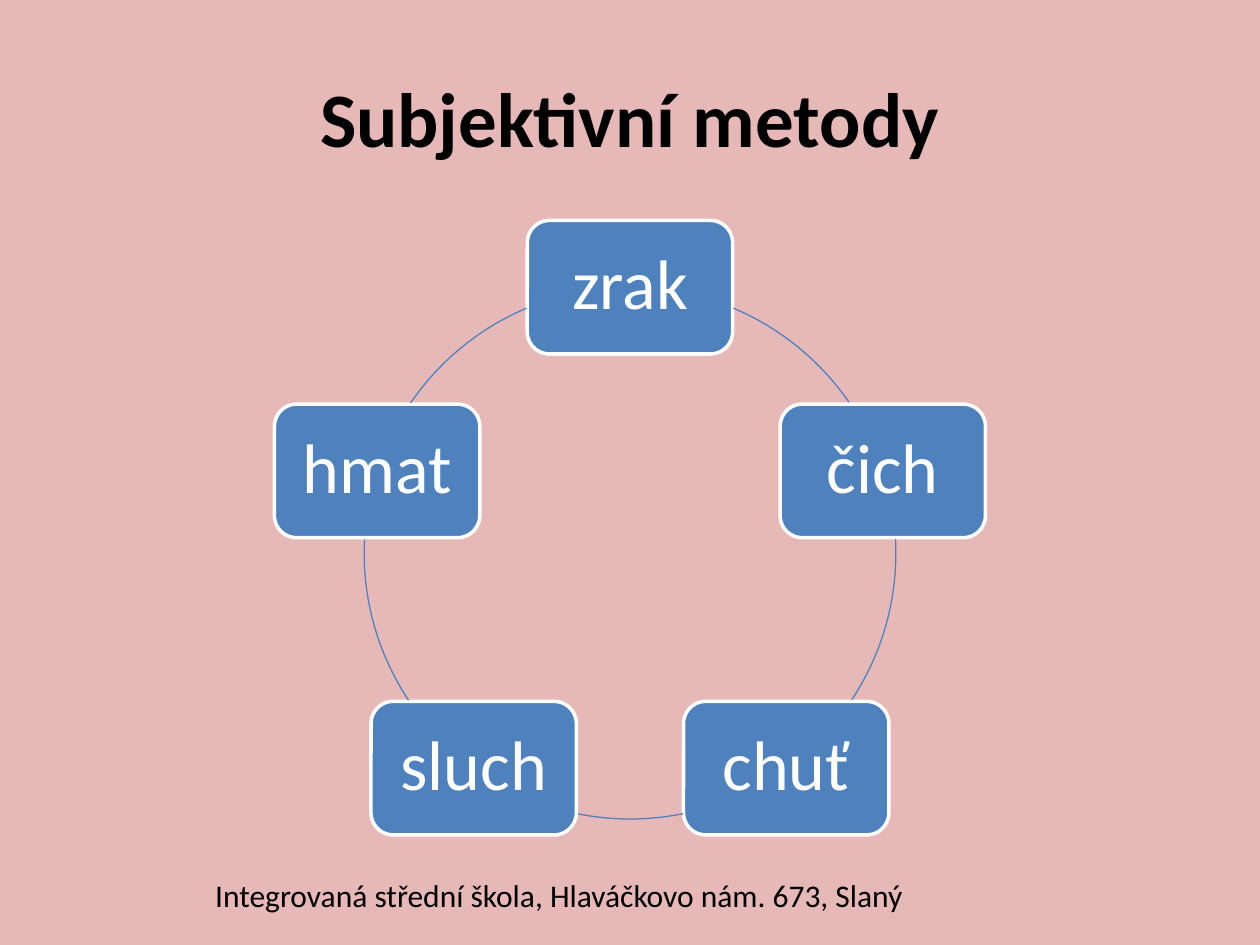
from math import cos, radians, sin

from pptx import Presentation
from pptx.dml.color import RGBColor
from pptx.enum.shapes import MSO_SHAPE as Shape
from pptx.enum.text import MSO_ANCHOR as Anchor, PP_ALIGN as Align
from pptx.util import Inches, Pt

PINK = RGBColor(0xE6, 0xB9, 0xB8)
BLUE = RGBColor(0x4F, 0x81, 0xBD)
WHITE = RGBColor(0xFF, 0xFF, 0xFF)
BLACK = RGBColor(0, 0, 0)

CENTER_X, CENTER_Y, RADIUS = 5, 4.39, 2.11
BOX_WIDTH, BOX_HEIGHT = 1.63, 1.06
SENSES = ["zrak", "čich", "chuť", "sluch", "hmat"]
ARCS = [(-67.1, -34.4), (-3, 33.6), (78.5, 101.5), (146.4, 183), (-145.6, -112.9)]


def write_text(shape, text, size, color, align, bold=False):
    """Fill a shape with one formatted paragraph."""
    frame = shape.text_frame
    frame.word_wrap = True
    frame.text = text
    paragraph = frame.paragraphs[0]
    paragraph.alignment = align
    font = paragraph.font
    font.name, font.size, font.bold = "Calibri", Pt(size), bold
    font.color.rgb = color
    return frame


def add_title(slide, text):
    """Place and format the title placeholder."""
    title = slide.shapes.title
    title.left, title.top = Inches(0.5), Inches(0.3)
    title.width, title.height = Inches(9), Inches(1.25)
    frame = write_text(title, text, 44, BLACK, Align.CENTER, bold=True)
    frame.vertical_anchor = Anchor.MIDDLE


def add_arc(slide, start, end):
    """Draw the part of the cycle's circle between two clockwise angles."""
    arc = slide.shapes.add_shape(
        Shape.ARC, Inches(CENTER_X - RADIUS), Inches(CENTER_Y - RADIUS),
        Inches(2 * RADIUS), Inches(2 * RADIUS))
    for index, angle in enumerate((start, end)):
        arc.adjustments[index] = angle % 360 * 0.6
    arc.shadow.inherit = False
    arc.fill.background()
    arc.line.color.rgb = BLUE
    arc.line.width = Pt(0.75)


def add_sense(slide, text, angle):
    """Add a rounded box centred on the circle at the given angle."""
    x = CENTER_X + RADIUS * cos(radians(angle))
    y = CENTER_Y + RADIUS * sin(radians(angle))
    box = slide.shapes.add_shape(
        Shape.ROUNDED_RECTANGLE, Inches(x - BOX_WIDTH / 2), Inches(y - BOX_HEIGHT / 2),
        Inches(BOX_WIDTH), Inches(BOX_HEIGHT))
    box.shadow.inherit = False
    box.fill.solid()
    box.fill.fore_color.rgb = BLUE
    box.line.color.rgb = WHITE
    box.line.width = Pt(2)
    frame = write_text(box, text, 40, WHITE, Align.CENTER)
    frame.vertical_anchor = Anchor.MIDDLE
    frame.margin_left = frame.margin_right = Inches(0.1)
    frame.paragraphs[0].line_spacing = 0.9


def add_footer(slide, text):
    """Add the school's address below the cycle."""
    footer = slide.shapes.add_textbox(Inches(1.61), Inches(6.9), Inches(7.4), Inches(0.4))
    write_text(footer, text, 18, BLACK, Align.LEFT)


def main():
    """Build the slide and save it."""
    presentation = Presentation()
    presentation.slide_width, presentation.slide_height = Inches(10), Inches(7.5)
    slide = presentation.slides.add_slide(presentation.slide_layouts[5])
    slide.background.fill.solid()
    slide.background.fill.fore_color.rgb = PINK
    add_title(slide, "Subjektivní metody")
    for index, (sense, arc) in enumerate(zip(SENSES, ARCS)):
        add_sense(slide, sense, index * 360 / len(SENSES) - 90)
        add_arc(slide, *arc)
    add_footer(slide, "Integrovaná střední škola, Hlaváčkovo nám. 673, Slaný")
    presentation.save("out.pptx")


if __name__ == "__main__":
    main()
